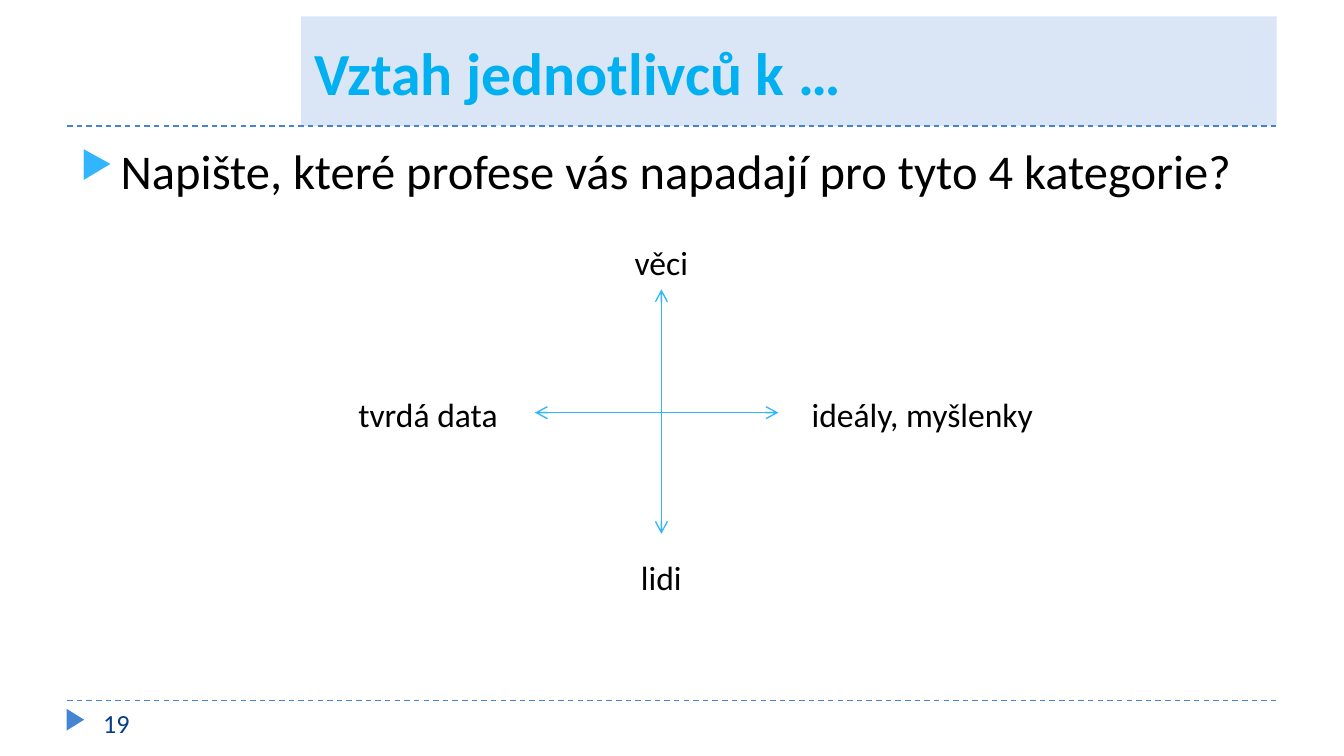
import pptx
import pptx.util
import pptx.dml.color
import pptx.enum.dml
import pptx.enum.shapes
import pptx.enum.text
import pptx.oxml
import pptx.oxml.ns

Cm = pptx.util.Cm
Pt = pptx.util.Pt
FONT = "Calibri"
COLORS = {
    "rule": "4584D3",
    "band": "DAE6F6",
    "title": "00B0F0",
    "page": "073E87",
    "text": "000000",
    "accent": "31B6FD",
}


def color(name):
    """Return the named colour."""
    return pptx.dml.color.RGBColor.from_string(COLORS[name])


def element(tag, **attrs):
    """Return a new drawing element with its attributes."""
    node = pptx.oxml.parse_xml(f"<a:{tag} {pptx.oxml.ns.nsdecls('a')}/>")
    for key, value in attrs.items():
        node.set(key, value)
    return node


def style(par, size, name, bold=False):
    """Format the runs of a paragraph."""
    for run in par.runs:
        run.font.name = FONT
        run.font.size = Pt(size)
        run.font.bold = bold
        run.font.color.rgb = color(name)


def label(slide, box, text, size, name="text", wrap=False, align="LEFT"):
    """Add a text box and return it."""
    shape = slide.shapes.add_textbox(*map(Cm, box))
    frame = shape.text_frame
    frame.word_wrap = wrap
    frame.text = text
    par = frame.paragraphs[0]
    par.alignment = getattr(pptx.enum.text.PP_ALIGN, align)
    style(par, size, name)
    return shape


def line(slide, start, end, name):
    """Add a thin straight line and return it."""
    kind = pptx.enum.shapes.MSO_CONNECTOR.STRAIGHT
    link = slide.shapes.add_connector(kind, *map(Cm, start + end))
    link.line.color.rgb = color(name)
    link.line.width = Pt(0.75)
    link._element.spPr.append(element("effectLst"))
    return link


def rule(slide, left, top, width):
    """Add a dashed horizontal rule."""
    link = line(slide, (left, top), (left + width, top), "rule")
    link.line.dash_style = pptx.enum.dml.MSO_LINE.DASH


def arrow(slide, start, end):
    """Add a line with an open arrowhead at both ends."""
    link = line(slide, start, end, "accent")
    outline = link.line._get_or_add_ln()
    for tag in ("headEnd", "tailEnd"):
        outline.append(element(tag, type="arrow"))
    return link


def header(slide, box):
    """Place the title on its band, with a rule below the whole row."""
    left, top, width, height = box
    rule(slide, left, top + height, width)
    title = slide.shapes.title
    inset = 4.42
    title.left, title.top = Cm(left + inset), Cm(top)
    title.width, title.height = Cm(width - inset), Cm(height)
    title.fill.solid()
    title.fill.fore_color.rgb = color("band")
    frame = title.text_frame
    frame.text = "Vztah jednotlivců k …"
    frame.vertical_anchor = pptx.enum.text.MSO_ANCHOR.MIDDLE
    par = frame.paragraphs[0]
    par.alignment = pptx.enum.text.PP_ALIGN.LEFT
    style(par, 32, "title", True)


def footer(slide, box):
    """Place the rule, the marker and the page number."""
    left, top, width, height = box
    rule(slide, left, top, width)
    kind = pptx.enum.shapes.MSO_SHAPE.ISOSCELES_TRIANGLE
    mark = slide.shapes.add_shape(
        kind, Cm(left - 0.05), Cm(top + 0.2), Cm(0.41), Cm(0.33))
    mark.rotation = 90
    mark.shadow.inherit = False
    mark.fill.solid()
    mark.fill.fore_color.rgb = color("rule")
    mark.line.fill.background()
    label(slide, (left + 0.43, top, 5.5, height), "19", 14, "page", True)


def body(slide, box):
    """Place the bulleted question."""
    text = "Napište, které profese vás napadají pro tyto 4 kategorie?"
    shape = label(slide, box, text, 26, wrap=True)
    props = shape.text_frame.paragraphs[0]._p.get_or_add_pPr()
    props.set("marL", str(Cm(0.76)))
    props.set("indent", str(Cm(-0.76)))
    tint = element("buClr")
    tint.append(element("srgbClr", val=COLORS["accent"]))
    props.append(tint)
    props.append(element("buSzPct", val="76000"))
    props.append(element("buChar", char="▶"))


def cross(slide, box):
    """Place the two crossing arrows and the four category labels."""
    left, top, width, height = box
    mid, tall = left + 6, 1.02
    axis = top + 3.35
    row = axis - 0.48
    things = label(slide, (mid - 0.76, top, 1.52, tall), "věci", 18,
                   align="CENTER")
    upright = arrow(slide, (mid, top + tall), (mid, top + 5.64))
    upright.begin_connect(things, 2)
    arrow(slide, (mid - 2.39, axis), (mid + 2.21, axis))
    label(slide, (left + width - 4.75, row, 4.75, tall),
          "ideály, myšlenky", 18)
    label(slide, (left, row, 3.18, tall), "tvrdá data", 18, align="CENTER")
    label(slide, (mid - 0.65, top + height - tall, 1.3, tall), "lidi", 18,
          align="CENTER")


def main():
    """Build the slide and save it."""
    deck = pptx.Presentation()
    deck.slide_width, deck.slide_height = Cm(25.4), Cm(14.29)
    slide = deck.slides.add_slide(deck.slide_layouts[5])
    left, width = 1.27, 22.86
    footer(slide, (left, 13.24, width, 0.76))
    header(slide, (left, 0.31, width, 2.07))
    body(slide, (left, 2.54, width, 10.29))
    cross(slide, (6.5, 4.45, 13.34, 6.98))
    deck.save("out.pptx")


if __name__ == "__main__":
    main()
